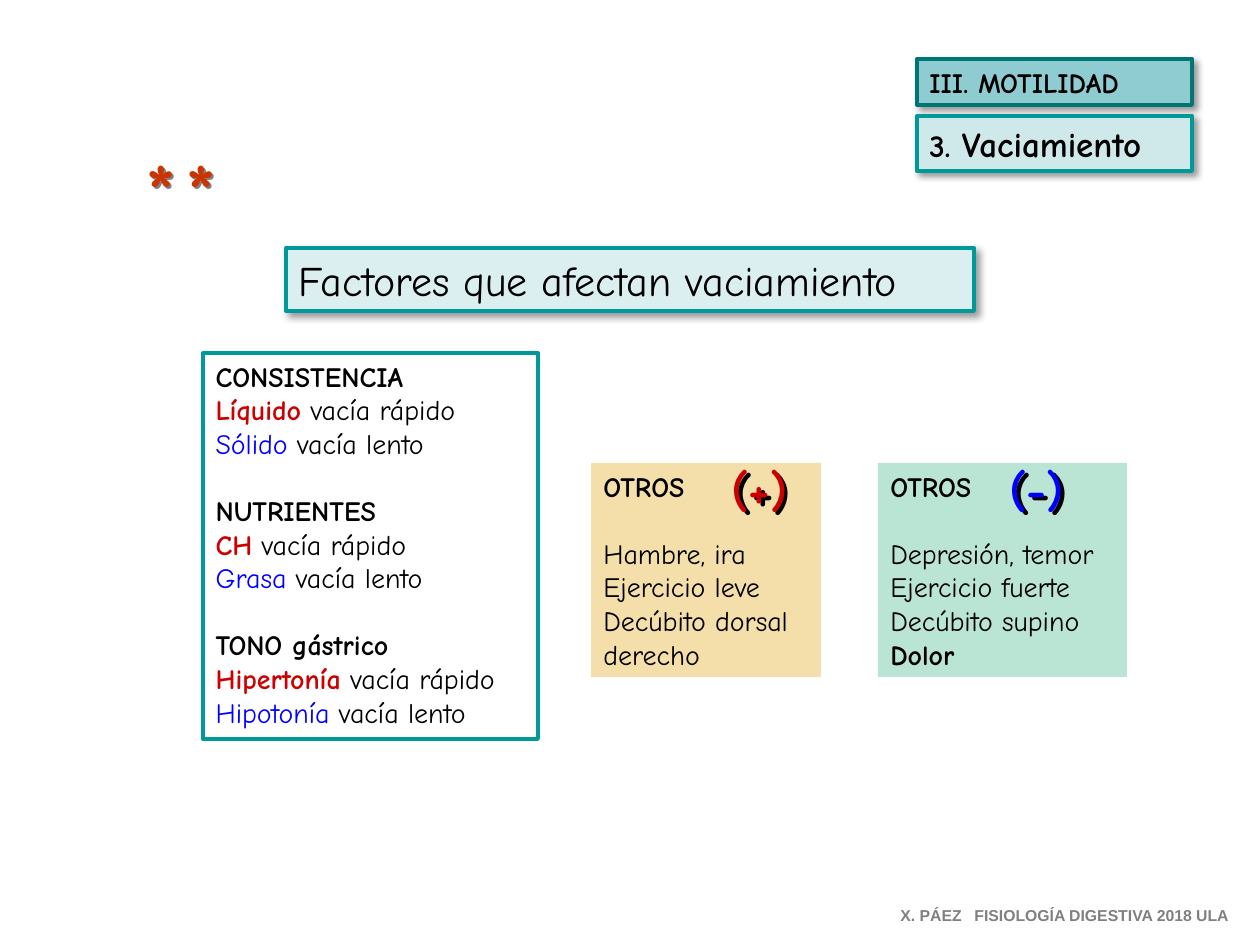
from lxml import etree
from pptx import Presentation
from pptx.dml.color import RGBColor
from pptx.enum.shapes import MSO_SHAPE
from pptx.enum.text import MSO_ANCHOR, MSO_AUTO_SIZE, PP_ALIGN
from pptx.oxml.ns import qn
from pptx.util import Inches, Pt

RECTANGLE = MSO_SHAPE.RECTANGLE
TOP = MSO_ANCHOR.TOP
NO_AUTOFIT = MSO_AUTO_SIZE.NONE
LEFT = PP_ALIGN.LEFT

BLACK = RGBColor(0x00, 0x00, 0x00)
GRAY = RGBColor(0x80, 0x80, 0x80)
RED = RGBColor(0xCC, 0x00, 0x00)
BLUE = RGBColor(0x00, 0x00, 0xFF)
ORANGE = RGBColor(0xCC, 0x33, 0x00)
TEAL = RGBColor(0x00, 0x99, 0x99)
DARK_TEAL = RGBColor(0x00, 0x76, 0x73)
MID_TEAL = RGBColor(0x8F, 0xCC, 0xD1)
LIGHT_TEAL = RGBColor(0xCF, 0xE9, 0xEB)
PALE_TEAL = RGBColor(0xDC, 0xEF, 0xF0)
SAND = RGBColor(0xF4, 0xDF, 0xAA)
MINT = RGBColor(0xBA, 0xE4, 0xD4)

PIXEL = Inches(1) / 126
FONT = "Comic Neue"
SIZE = 16
BLANK_LINE = 19.2


class SlideBuilder:
    """Draws styled elements on one slide, measured in pixels."""

    def __init__(self, slide):
        self.slide = slide

    def emu(self, *pixels):
        return [round(value * PIXEL) for value in pixels]

    def place(self, shape, box):
        shape.left, shape.top, shape.width, shape.height = self.emu(*box)

    def style(self, shape, fill=None, line=None):
        if fill is None:
            shape.fill.background()
        else:
            shape.fill.solid()
            shape.fill.fore_color.rgb = fill
        if line is None:
            shape.line.fill.background()
        else:
            shape.line.color.rgb = line
            shape.line.width = Pt(2.25)

    def shadow(self, shape, color=BLACK, opacity=40, blur=4, distance=3):
        shape.shadow.inherit = False
        effects = shape._element.spPr.find(qn("a:effectLst"))
        outer = etree.SubElement(
            effects, qn("a:outerShdw"), blurRad=str(Pt(blur)), dist=str(Pt(distance)),
            dir="2700000", algn="tl", rotWithShape="0")
        shade = etree.SubElement(outer, qn("a:srgbClr"), val=str(color))
        etree.SubElement(shade, qn("a:alpha"), val=str(opacity * 1000))

    def add_run(self, paragraph, text, size=SIZE, color=BLACK, bold=False, font=FONT):
        run = paragraph.add_run()
        run.text = text
        run.font.name = font
        run.font.size = Pt(size)
        run.font.bold = bold
        run.font.color.rgb = color

    def add_text(self, shape, groups):
        frame = shape.text_frame
        frame.word_wrap = True
        frame.auto_size = NO_AUTOFIT
        frame.vertical_anchor = TOP
        paragraph = None
        for group in groups:
            for index, runs in enumerate(group):
                first = paragraph is None
                paragraph = frame.paragraphs[0] if first else frame.add_paragraph()
                paragraph.alignment = LEFT
                paragraph.space_before = Pt(0 if first or index else BLANK_LINE)
                if shape.is_placeholder:
                    properties = paragraph._p.get_or_add_pPr()
                    properties.set("marL", "0")
                    properties.set("indent", "0")
                    etree.SubElement(properties, qn("a:buNone"))
                for text, options in runs:
                    self.add_run(paragraph, text, **options)

    def title(self, box, text):
        shape = self.slide.shapes.title
        self.place(shape, box)
        self.style(shape, PALE_TEAL, TEAL)
        self.shadow(shape)
        self.add_text(shape, [[[(text, {"size": 24})]]])

    def body(self, box, groups):
        shape = self.slide.placeholders[1]
        self.place(shape, box)
        self.style(shape, line=TEAL)
        self.add_text(shape, groups)

    def panel(self, box, groups, fill, line=None, shadow=False):
        shape = self.slide.shapes.add_shape(RECTANGLE, *self.emu(*box))
        self.style(shape, fill, line)
        shape.shadow.inherit = False
        if shadow:
            self.shadow(shape)
        self.add_text(shape, groups)

    def symbol(self, box, text, size, color, shade, distance):
        shape = self.slide.shapes.add_textbox(*self.emu(*box))
        self.style(shape)
        self.shadow(shape, shade, opacity=100, blur=0, distance=distance)
        self.add_text(shape, [[[(text, {"size": size, "color": color, "bold": True})]]])

    def footer(self, box, texts, tab):
        shape = self.slide.shapes.add_textbox(*self.emu(*box))
        properties = shape.text_frame.paragraphs[0]._p.get_or_add_pPr()
        stops = etree.SubElement(properties, qn("a:tabLst"))
        etree.SubElement(stops, qn("a:tab"), pos=str(self.emu(tab)[0]), algn="l")
        options = {"size": 9, "color": GRAY, "bold": True, "font": "Arial"}
        self.add_text(shape, [[[("\t".join(texts), options)]]])


def main():
    presentation = Presentation()
    presentation.slide_width = Inches(10)
    presentation.slide_height = Inches(7.5)
    slide = presentation.slides.add_slide(presentation.slide_layouts[1])
    builder = SlideBuilder(slide)
    bold = {"bold": True}
    fast = {"bold": True, "color": RED}
    slow = {"color": BLUE}

    builder.title((286, 248, 688, 63), "Factores que afectan vaciamiento")

    factors = [
        ("CONSISTENCIA", "Líquido", "Sólido"),
        ("NUTRIENTES", "CH", "Grasa"),
        ("TONO gástrico", "Hipertonía", "Hipotonía"),
    ]
    builder.body((203, 353, 335, 386), [
        [[(heading, bold)],
         [(quick, fast), (" vacía rápido", {})],
         [(sluggish, slow), (" vacía lento", {})]]
        for heading, quick, sluggish in factors])

    others = [
        ((591, 463, 230, 214), SAND, (719, 452, 91, 72), "(+)", RED,
         ["Hambre, ira", "Ejercicio leve", "Decúbito dorsal", "derecho"], {}),
        ((878, 463, 249, 214), MINT, (997, 452, 91, 72), "(-)", BLUE,
         ["Depresión, temor", "Ejercicio fuerte", "Decúbito supino", "Dolor"], bold),
    ]
    for box, fill, sign_box, sign, color, items, last_style in others:
        lines = [[(item, {})] for item in items[:-1]] + [[(items[-1], last_style)]]
        builder.panel(box, [[[("OTROS", bold)]], lines], fill)
        builder.symbol(sign_box, sign, 28, color, BLACK, 3)

    for left in (134, 174):
        builder.symbol((left, 135, 66, 105), "*", 44, ORANGE, GRAY, 2)

    builder.panel((917, 59, 275, 46), [[[("III. MOTILIDAD", bold)]]],
                  MID_TEAL, DARK_TEAL, shadow=True)
    builder.panel((917, 116, 275, 55),
                  [[[("3. ", {"size": 18, "bold": True}),
                     ("Vaciamiento", {"size": 20, "bold": True})]]],
                  LIGHT_TEAL, TEAL, shadow=True)
    builder.footer((888, 900, 360, 32), ["X. PÁEZ", "FISIOLOGÍA DIGESTIVA 2018 ULA"], 74)
    presentation.save("out.pptx")


if __name__ == "__main__":
    main()
